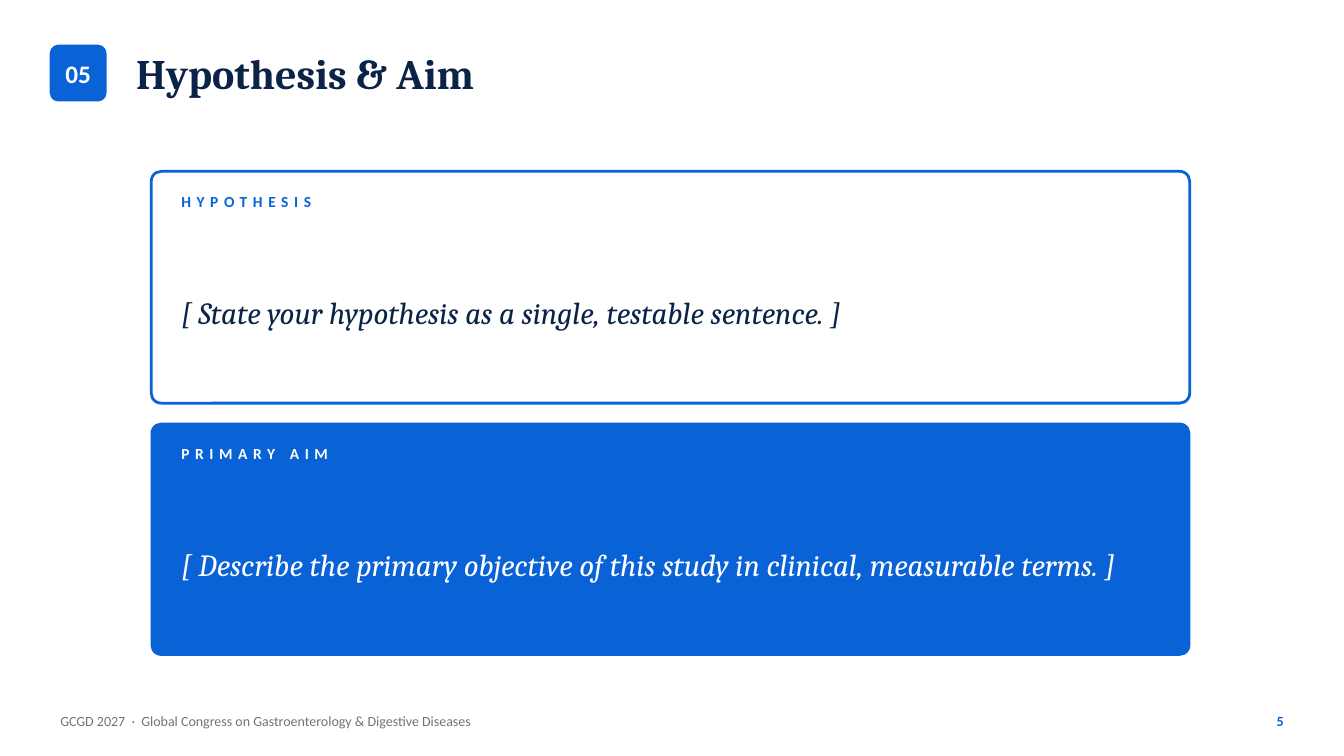
import pptx
import pptx.dml.color
import pptx.enum.shapes
import pptx.enum.text
import pptx.util

RGBColor = pptx.dml.color.RGBColor
BLUE = RGBColor(0x0A, 0x63, 0xD6)
NAVY = RGBColor(0x0B, 0x23, 0x46)
GREY = RGBColor(0x6C, 0x75, 0x7D)
WHITE = RGBColor(0xFF, 0xFF, 0xFF)

ALIGN = pptx.enum.text.PP_ALIGN
SANS, SERIF = "Calibri", "Cambria"

SLIDE_WIDTH = pptx.util.Inches(13.33)
SLIDE_HEIGHT = pptx.util.Inches(7.5)
CELL = SLIDE_HEIGHT // 15  # the slide is laid out on 15 rows of square cells

HEADER_ROW, HEADER_ROWS = 0.9, 1.1
FOOTER_ROW, FOOTER_ROWS = 14, 0.6
CARD_COLUMN, CARD_COLUMNS = 3, 20.6
FIRST_CARD_ROW, CARD_ROWS, CARD_GAP = 3.4, 4.6, 0.4
CARD_PADDING = 0.4


def grid(*cells):
    """Turn column, row, columns, rows into slide lengths."""
    return [round(count * CELL) for count in cells]


def write(box, text, color, size, name=SANS, align=ALIGN.LEFT, tracking=None, **styles):
    """Fill a box with one vertically centred line of formatted text."""
    frame = box.text_frame
    frame.word_wrap = True
    frame.auto_size = pptx.enum.text.MSO_AUTO_SIZE.NONE
    frame.vertical_anchor = pptx.enum.text.MSO_ANCHOR.MIDDLE
    para = frame.paragraphs[0]
    para.alignment = align
    span = para.add_run()
    span.text = text
    formats = {"name": name, "size": pptx.util.Pt(size), **styles}
    for attribute, value in formats.items():
        setattr(span.font, attribute, value)
    span.font.color.rgb = color
    if tracking:
        span._r.get_or_add_rPr().set("spc", str(tracking * 100))


def add_text(page, cells, *content, **formats):
    write(page.shapes.add_textbox(*grid(*cells)), *content, **formats)


def add_panel(page, cells, fill, line_width, rounding):
    """Add a rounded panel with a blue outline."""
    panel = page.shapes.add_shape(
        pptx.enum.shapes.MSO_SHAPE.ROUNDED_RECTANGLE, *grid(*cells))
    panel.adjustments[0] = rounding
    panel.shadow.inherit = False
    panel.fill.solid()
    panel.fill.fore_color.rgb = fill
    panel.line.color.rgb = BLUE
    panel.line.width = pptx.util.Pt(line_width)
    return panel


def add_header(page, number, heading):
    badge = add_panel(page, (1, HEADER_ROW, HEADER_ROWS, HEADER_ROWS), BLUE, 1, 0.145)
    write(badge, number, WHITE, 18, align=ALIGN.CENTER, bold=True)
    title = page.shapes.title
    title.left, title.top, title.width, title.height = grid(2.5, HEADER_ROW, 23, HEADER_ROWS)
    write(title, heading, NAVY, 30, name=SERIF, bold=True)


def add_card(page, row, label, statement, fill, line_width, label_color, statement_color):
    add_panel(page, (CARD_COLUMN, row, CARD_COLUMNS, CARD_ROWS), fill, line_width, 0.043)
    column = CARD_COLUMN + CARD_PADDING
    columns = CARD_COLUMNS - 2 * CARD_PADDING
    add_text(page, (column, row + 0.3, columns, 0.6), label, label_color, 11,
             bold=True, tracking=4)
    add_text(page, (column, row + 1.1, columns, 3.4), statement, statement_color, 22,
             name=SERIF, italic=True)


def add_footer(page, text, number):
    add_text(page, (1, FOOTER_ROW, 18, FOOTER_ROWS), text, GREY, 10)
    add_text(page, (24.66, FOOTER_ROW, 1, FOOTER_ROWS), number, BLUE, 10,
             align=ALIGN.RIGHT, bold=True)


def main():
    deck = pptx.Presentation()
    deck.slide_width, deck.slide_height = SLIDE_WIDTH, SLIDE_HEIGHT
    page = deck.slides.add_slide(deck.slide_layouts.get_by_name("Title Only"))

    add_header(page, "05", "Hypothesis & Aim")
    cards = [
        ("HYPOTHESIS", "[ State your hypothesis as a single, testable sentence. ]",
         WHITE, 2, BLUE, NAVY),
        ("PRIMARY AIM",
         "[ Describe the primary objective of this study in clinical, measurable terms. ]",
         BLUE, 1, WHITE, WHITE),
    ]
    for index, card in enumerate(cards):
        add_card(page, FIRST_CARD_ROW + index * (CARD_ROWS + CARD_GAP), *card)
    add_footer(page, "GCGD 2027  ·  Global Congress on Gastroenterology & Digestive Diseases", "5")

    deck.save("out.pptx")


if __name__ == "__main__":
    main()
